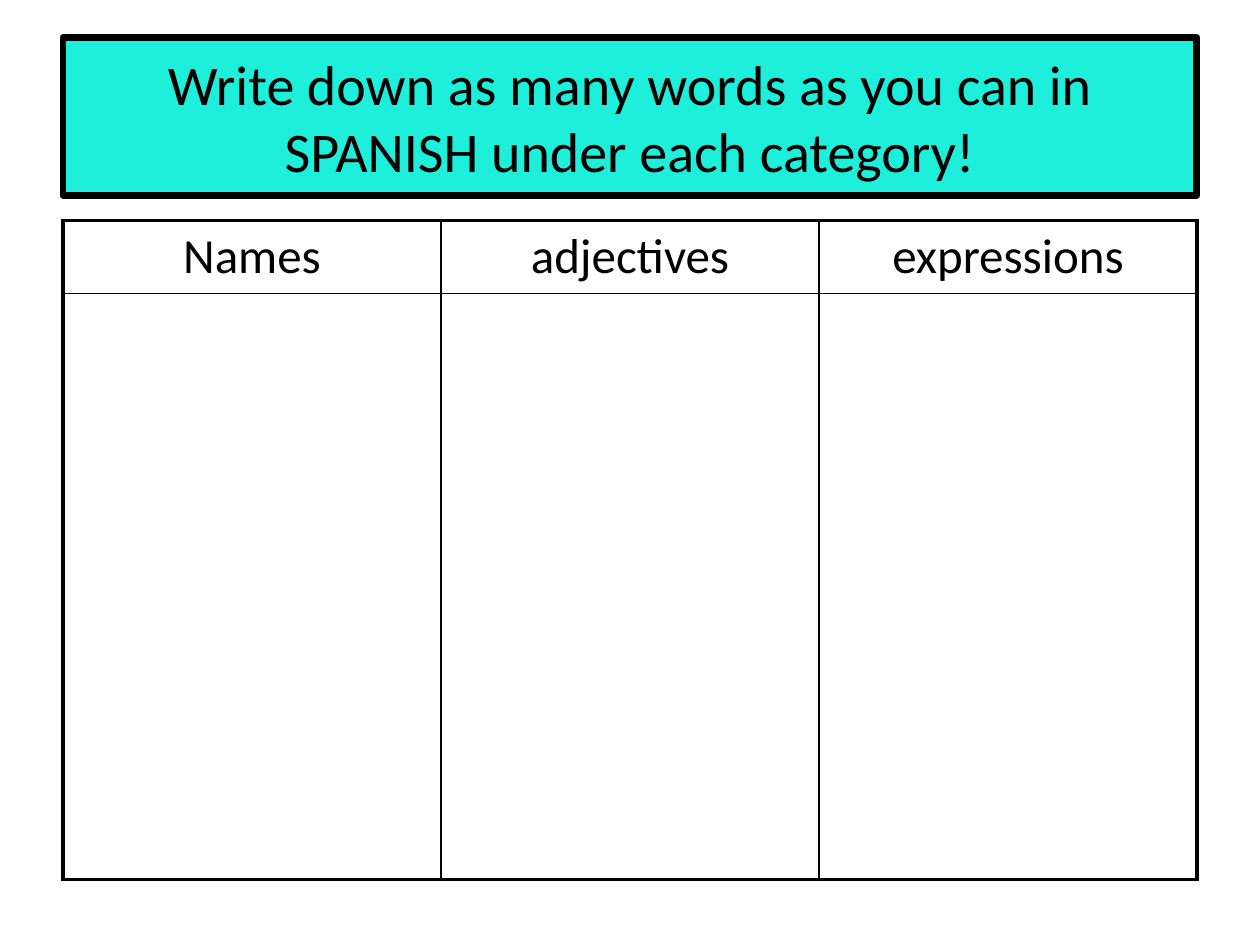
from dataclasses import dataclass

from lxml import etree
from pptx import Presentation
from pptx import util as u
from pptx.dml.color import RGBColor
from pptx.enum import text


@dataclass(frozen=True)
class Theme:
    font: str = "Calibri"
    ink: str = "000000"
    banner: str = "1DEFDB"
    title_size: int = 32
    heading_size: int = 28
    banner_line: float = 4
    outer_line: float = 2.25
    inner_line: float = 1


theme = Theme()
namespace = "http://schemas.openxmlformats.org/drawingml/2006/main"


def style_paragraph(paragraph, size):
    paragraph.alignment = text.PP_ALIGN.CENTER
    paragraph.font.name = theme.font
    paragraph.font.size = u.Pt(size)
    paragraph.font.bold = False
    paragraph.font.color.rgb = RGBColor.from_string(theme.ink)


def add_border(cell, position, side, width):
    line = etree.Element(f"{{{namespace}}}ln{side}", w=str(u.Pt(width)))
    fill = etree.SubElement(line, f"{{{namespace}}}solidFill")
    etree.SubElement(fill, f"{{{namespace}}}srgbClr", val=theme.ink)
    cell._tc.get_or_add_tcPr().insert(position, line)


presentation = Presentation()
presentation.slide_width = u.Inches(10)
presentation.slide_height = u.Inches(7.5)
slide = presentation.slides.add_slide(presentation.slide_layouts[5])

margin = int(presentation.slide_width * 0.05)
content_width = presentation.slide_width - 2 * margin

title = slide.shapes.title
title.left, title.top = margin, int(presentation.slide_height * 0.04)
title.width, title.height = content_width, u.Inches(1.25)
title.fill.solid()
title.fill.fore_color.rgb = RGBColor.from_string(theme.banner)
title.line.color.rgb = RGBColor.from_string(theme.ink)
title.line.width = u.Pt(theme.banner_line)
title.text_frame.text = "Write down as many words as you can in SPANISH under each category!"
title.text_frame.word_wrap = True
title.text_frame.auto_size = text.MSO_AUTO_SIZE.NONE
title.text_frame.vertical_anchor = text.MSO_ANCHOR.MIDDLE
style_paragraph(title.text_frame.paragraphs[0], theme.title_size)

categories = ["Names", "adjectives", "expressions"]
row_heights = [u.Inches(0.58), u.Inches(4.65)]
last_row, last_column = len(row_heights) - 1, len(categories) - 1
table = slide.shapes.add_table(
    len(row_heights), len(categories),
    margin, u.Inches(1.75), content_width, sum(row_heights),
).table
table.first_row = False
table.horz_banding = False

for row, height in enumerate(row_heights):
    table.rows[row].height = height
    for column, category in enumerate(categories):
        cell = table.cell(row, column)
        cell.fill.background()
        if row == 0:
            cell.text = category
        style_paragraph(cell.text_frame.paragraphs[0], theme.heading_size)
        outer_edges = {
            "L": column == 0,
            "R": column == last_column,
            "T": row == 0,
            "B": row == last_row,
        }
        for position, (side, is_outer) in enumerate(outer_edges.items()):
            add_border(cell, position, side, theme.outer_line if is_outer else theme.inner_line)

presentation.save("out.pptx")
